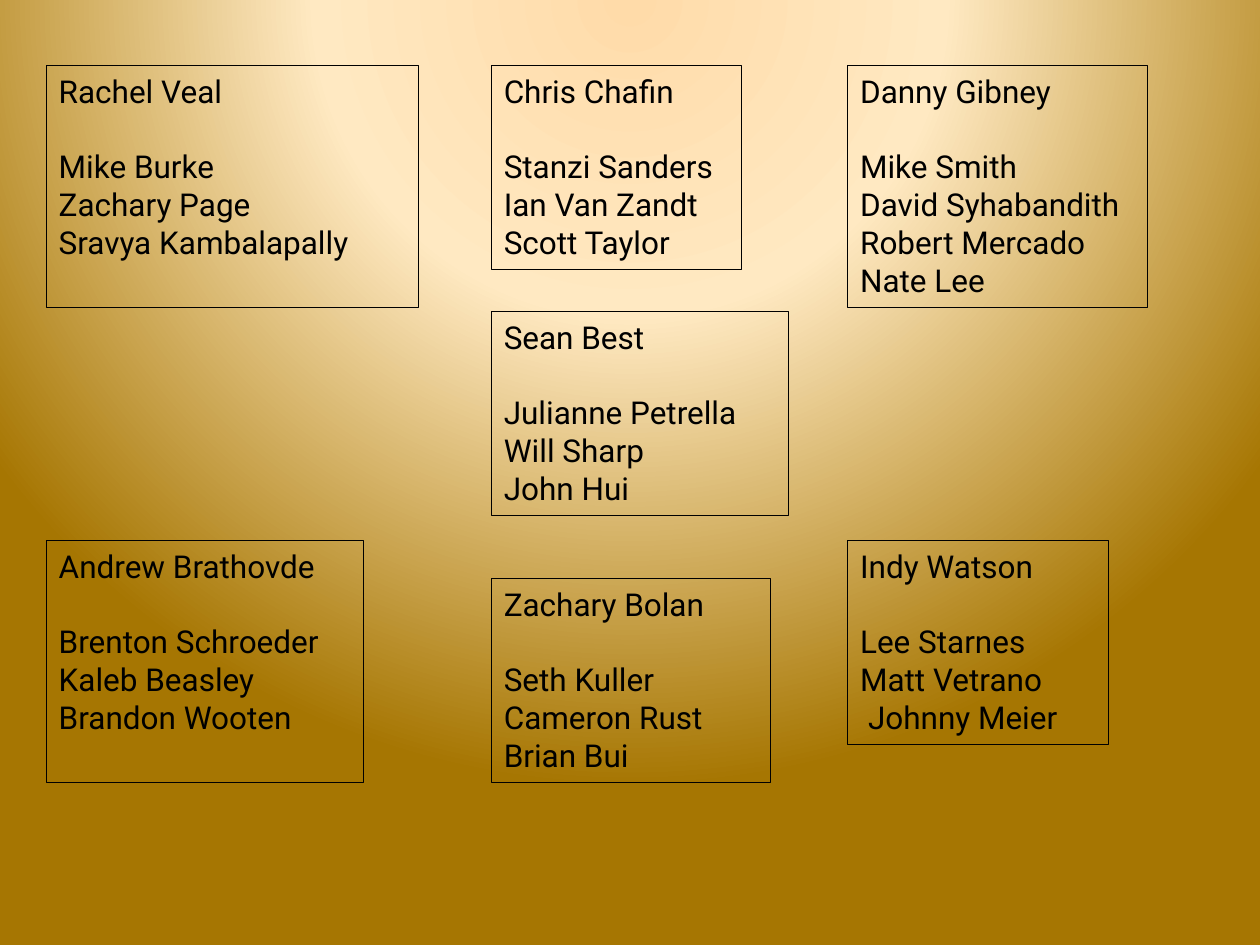
import lxml.etree
import pptx
import pptx.dml.color
import pptx.enum.text
import pptx.oxml.ns
import pptx.util
from dataclasses import dataclass

Pt = pptx.util.Pt
qn = pptx.oxml.ns.qn


@dataclass(frozen=True)
class Theme:
    ink: str = "000000"
    font: str = "Roboto"
    size: float = 18
    line_gap: float = 21.5
    border: float = 0.75
    glow: tuple = ((0, "FFDBA9"), (40, "FFE9C2"), (100, "A67602"))


theme = Theme()
ink = pptx.dml.color.RGBColor.from_string(theme.ink)


def write(paragraph, text, space_after=0, indent=0):
    if indent:
        paragraph._p.get_or_add_pPr().set("marL", str(Pt(indent)))
    paragraph.space_after = Pt(space_after)
    run = paragraph.add_run()
    run.text = text
    run.font.name = theme.font
    run.font.size = Pt(theme.size)
    run.font.color.rgb = ink


deck = pptx.Presentation()
deck.slide_width, deck.slide_height = Pt(720), Pt(540)
slide = deck.slides.add_slide(deck.slide_layouts[6])

# Circular glow centred above the top edge
slide.background.fill.gradient()
glow = slide.element.find(".//" + qn("a:gradFill"))
glow.clear()
glow.set("rotWithShape", "1")
stops = lxml.etree.SubElement(glow, qn("a:gsLst"))
for percent, colour in theme.glow:
    stop = lxml.etree.SubElement(stops, qn("a:gs"), pos=str(percent * 1000))
    lxml.etree.SubElement(stop, qn("a:srgbClr"), val=colour)
circle = lxml.etree.SubElement(glow, qn("a:path"), path="circle")
lxml.etree.SubElement(circle, qn("a:fillToRect"),
                      l="50000", t="-80000", r="50000", b="180000")

# Teams: left, top, width, height, leader, members
LEFT, MIDDLE, RIGHT = 26.5, 280.8, 484.4
UPPER, LOWER = 37.5, 308.9
SHORT, TALL = 116.6, 138.2
teams = [
    (LEFT, UPPER, 212.6, TALL, "Rachel Veal",
     ["Mike Burke", "Zachary Page", "Sravya Kambalapally"]),
    (MIDDLE, UPPER, 142.8, SHORT, "Chris Chafin",
     ["Stanzi Sanders", "Ian Van Zandt", "Scott Taylor"]),
    (RIGHT, UPPER, 171.4, TALL, "Danny Gibney",
     ["Mike Smith", "David Syhabandith", "Robert Mercado", "Nate Lee"]),
    (MIDDLE, 178, 169.8, SHORT, "Sean Best",
     ["Julianne Petrella", "Will Sharp", "John Hui"]),
    (LEFT, LOWER, 181.2, TALL, "Andrew Brathovde",
     ["Brenton Schroeder", "Kaleb Beasley", "Brandon Wooten"]),
    (MIDDLE, 330.5, 159.4, SHORT, "Zachary Bolan",
     ["Seth Kuller", "Cameron Rust", "Brian Bui"]),
    (RIGHT, LOWER, 149.2, SHORT, "Indy Watson",
     ["Lee Starnes", "Matt Vetrano", "Johnny Meier"]),
]
indents = {"Johnny Meier": 4.5}

for left, top, width, height, leader, members in teams:
    team = slide.shapes.add_textbox(Pt(left), Pt(top), Pt(width), Pt(height))
    team.line.color.rgb = ink
    team.line.width = Pt(theme.border)
    frame = team.text_frame
    frame.word_wrap = True
    frame.auto_size = pptx.enum.text.MSO_AUTO_SIZE.NONE
    write(frame.paragraphs[0], leader, space_after=theme.line_gap)
    for member in members:
        write(frame.add_paragraph(), member, indent=indents.get(member, 0))

deck.save("out.pptx")
